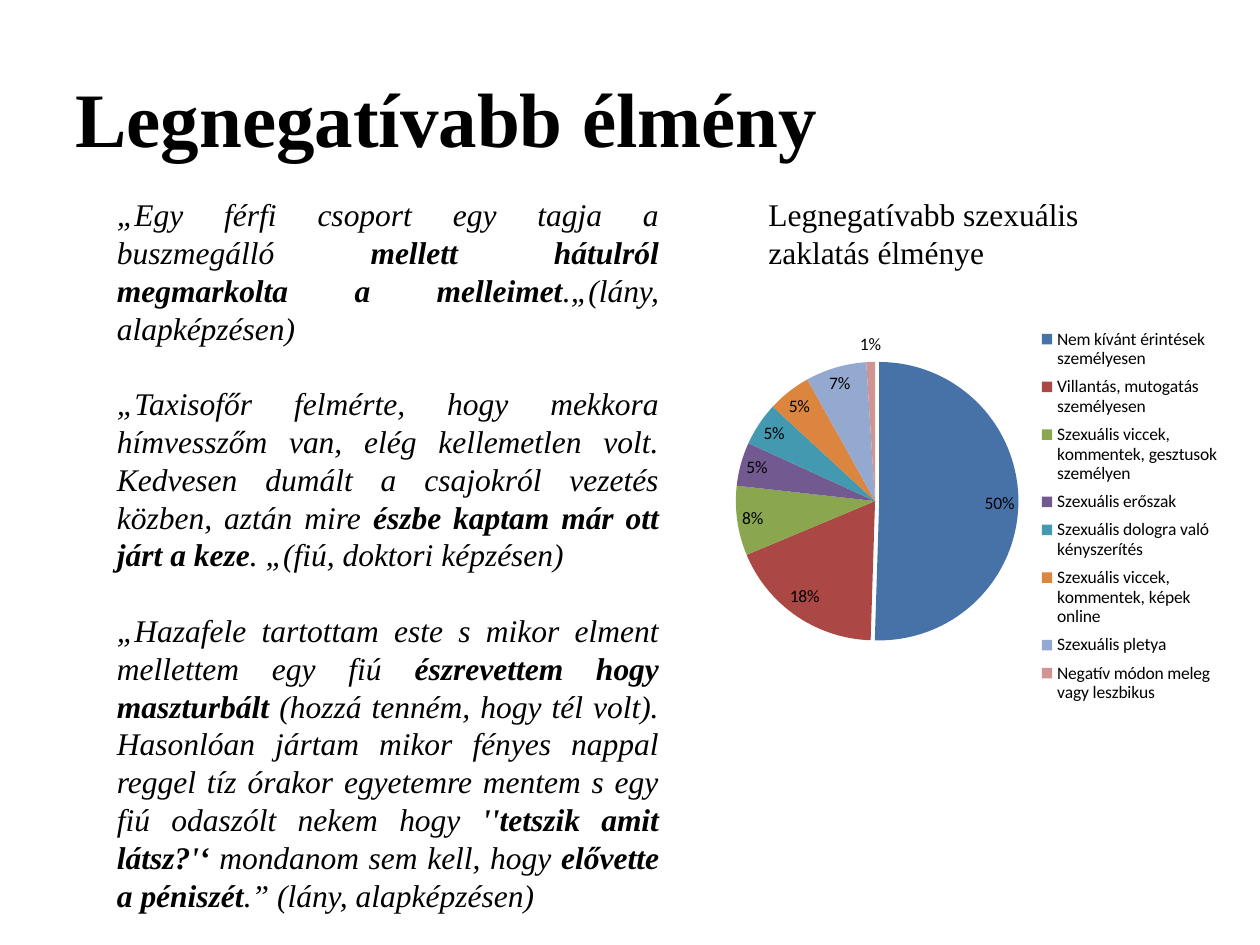
from lxml import etree
from pptx import Presentation
from pptx.chart.data import CategoryChartData
from pptx.dml.color import RGBColor
from pptx.enum.chart import XL_CHART_TYPE as ChartType, XL_LEGEND_POSITION as LegendPosition
from pptx.enum.text import MSO_ANCHOR as Anchor, PP_ALIGN as Align
from pptx.oxml.ns import qn
from pptx.util import Inches, Pt

COLORS = {
    "text": "000000",
    "touch": "4672A8",
    "flashing": "AB4744",
    "jokes": "8AA64F",
    "violence": "725990",
    "coercion": "4299B0",
    "online": "DC853E",
    "gossip": "93A9D0",
    "orientation": "D09493",
}
SERIF = "Times New Roman"

EXPERIENCES = [
    ("Nem kívánt érintések személyesen", 50, "touch"),
    ("Villantás, mutogatás személyesen", 18, "flashing"),
    ("Szexuális viccek, kommentek, gesztusok személyen", 8, "jokes"),
    ("Szexuális erőszak", 5, "violence"),
    ("Szexuális dologra való kényszerítés", 5, "coercion"),
    ("Szexuális viccek, kommentek, képek online", 5, "online"),
    ("Szexuális pletya", 7, "gossip"),
    ("Negatív módon meleg vagy leszbikus", 1, "orientation"),
]

QUOTES = [
    [
        "„Egy férfi csoport egy tagja a buszmegálló ",
        "mellett hátulról megmarkolta a melleimet",
        ".„(lány, alapképzésen)",
    ],
    [
        "„Taxisofőr felmérte, hogy mekkora hímvesszőm van, elég kellemetlen volt. "
        "Kedvesen dumált a csajokról vezetés közben, aztán mire ",
        "észbe kaptam már ott járt a keze",
        ". „(fiú, doktori képzésen)",
    ],
    [
        "„Hazafele tartottam este s mikor elment mellettem egy fiú ",
        "észrevettem hogy maszturbált",
        " (hozzá tenném, hogy tél volt). Hasonlóan jártam mikor fényes nappal reggel "
        "tíz órakor egyetemre mentem s egy fiú odaszólt nekem hogy ",
        "''tetszik amit látsz?'‘ ",
        "mondanom sem kell, hogy ",
        "elővette a péniszét",
        ".” (lány, alapképzésen)",
    ],
]


def set_font(font, name, size):
    """Apply a typeface, a point size and the text colour."""
    font.name = name
    font.size = Pt(size)
    font.color.rgb = RGBColor.from_string(COLORS["text"])


def add_frame(slide, box):
    """Add a wrapping text box and return its text frame."""
    frame = slide.shapes.add_textbox(*map(Inches, box)).text_frame
    frame.word_wrap = True
    return frame


def add_heading(slide, box, text, size, bold=False, anchor=Anchor.TOP):
    """Place a single-paragraph heading in the box."""
    frame = add_frame(slide, box)
    frame.vertical_anchor = anchor
    paragraph = frame.paragraphs[0]
    paragraph.text = text
    set_font(paragraph.font, SERIF, size)
    paragraph.font.bold = bold


def add_quotes(slide, box):
    """Place the justified quotes, alternating plain and bold passages, in the box."""
    frame = add_frame(slide, box)
    for index, passages in enumerate(QUOTES):
        paragraph = frame.add_paragraph() if index else frame.paragraphs[0]
        paragraph.alignment = Align.JUSTIFY
        paragraph.space_before = Pt(21.6 if index else 0)
        set_font(paragraph.font, SERIF, 18)
        paragraph.font.italic = True
        for position, passage in enumerate(passages):
            run = paragraph.add_run()
            run.text = passage
            run.font.bold = position % 2 == 1


def set_layout(element, fractions, inner=False):
    """Fix a chart part at x, y, width and height given as fractions of the chart."""
    for old_layout in element.findall(qn("c:layout")):
        element.remove(old_layout)
    layout = etree.Element(qn("c:layout"))
    manual = etree.SubElement(layout, qn("c:manualLayout"))
    if inner:
        etree.SubElement(manual, qn("c:layoutTarget"), val="inner")
    for tag in ("xMode", "yMode"):
        etree.SubElement(manual, qn(f"c:{tag}"), val="edge")
    for tag, fraction in zip("xywh", fractions):
        etree.SubElement(manual, qn(f"c:{tag}"), val=str(fraction))
    if inner:
        element.insert(0, layout)
    else:
        element.find(qn("c:legendPos")).addnext(layout)


def add_experience_chart(slide, box):
    """Place the pie chart of worst experiences in the box."""
    names, values, color_keys = zip(*EXPERIENCES)
    data = CategoryChartData()
    data.categories = names
    data.add_series("Series 1", values)
    chart = slide.shapes.add_chart(ChartType.PIE, *map(Inches, box), data).chart
    set_font(chart.font, "Calibri", 10)
    chart.has_title = False
    chart.has_legend = True
    chart.legend.position = LegendPosition.RIGHT
    chart.legend.include_in_layout = False

    plot = chart.plots[0]
    plot.vary_by_categories = True
    plot.has_data_labels = True
    labels = plot.data_labels
    labels.show_percentage = False
    labels.show_value = True
    labels.number_format = '0"%"'
    labels.number_format_is_linked = False

    points = plot.series[0].points
    for index, key in enumerate(color_keys):
        fill = points[index].format.fill
        fill.solid()
        fill.fore_color.rgb = RGBColor.from_string(COLORS[key])
    explosion = etree.Element(qn("c:explosion"), val="3")
    first_point = plot.series[0]._element.find(qn("c:dPt"))
    first_point.find(qn("c:spPr")).addprevious(explosion)

    plot_area = chart._chartSpace.find(f".//{qn('c:plotArea')}")
    set_layout(plot_area, (0.08, 0.24, 0.52, 0.57), inner=True)
    set_layout(chart.legend._element, (0.64, 0.16, 0.35, 0.79))


def main():
    """Build the slide and save the presentation."""
    presentation = Presentation()
    presentation.slide_width = Inches(10)
    presentation.slide_height = Inches(7.5)
    slide = presentation.slides.add_slide(presentation.slide_layouts[6])
    add_heading(slide, (0.5, 0.3, 9, 1.25), "Legnegatívabb élmény", 44, True, Anchor.MIDDLE)
    add_experience_chart(slide, (5.5, 1.92, 4.25, 3.92))
    add_quotes(slide, (0.83, 1.5, 4.5, 6.16))
    add_heading(slide, (6, 1.5, 3.25, 0.71), "Legnegatívabb szexuális zaklatás élménye", 18)
    presentation.save("out.pptx")


if __name__ == "__main__":
    main()
